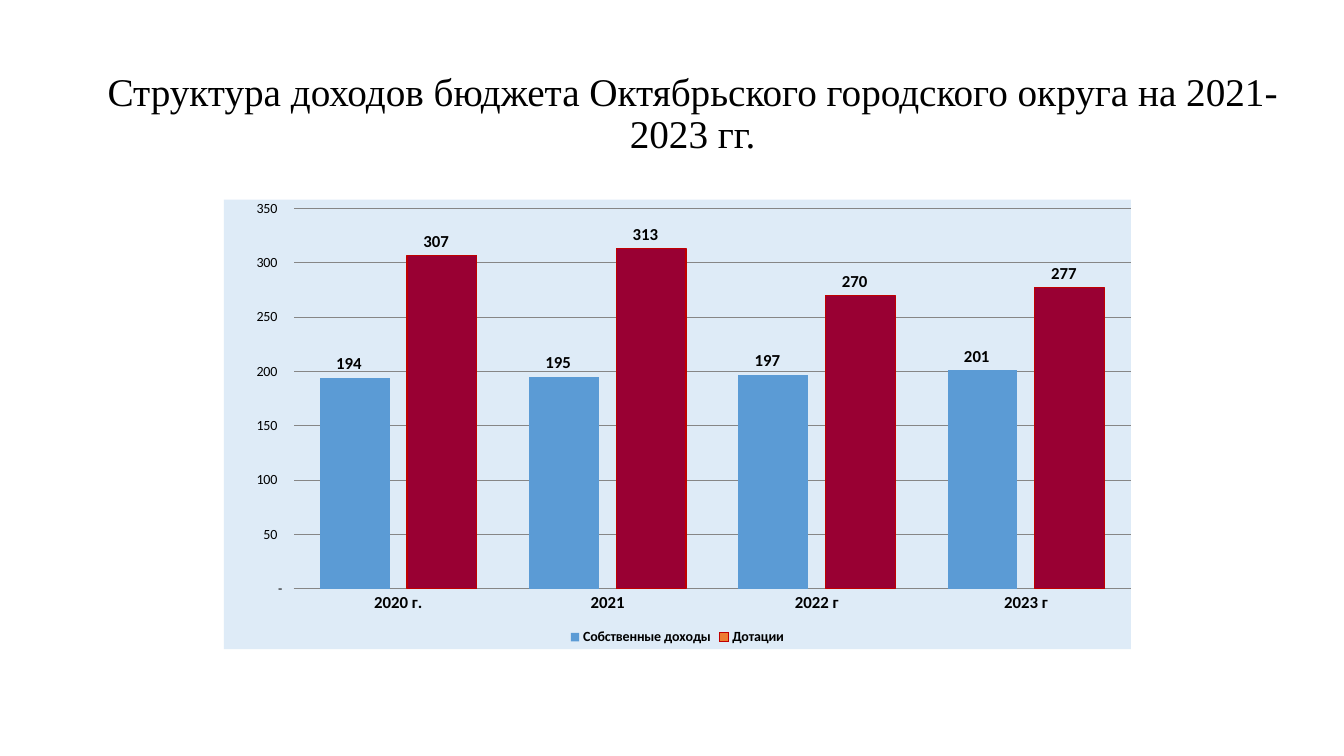
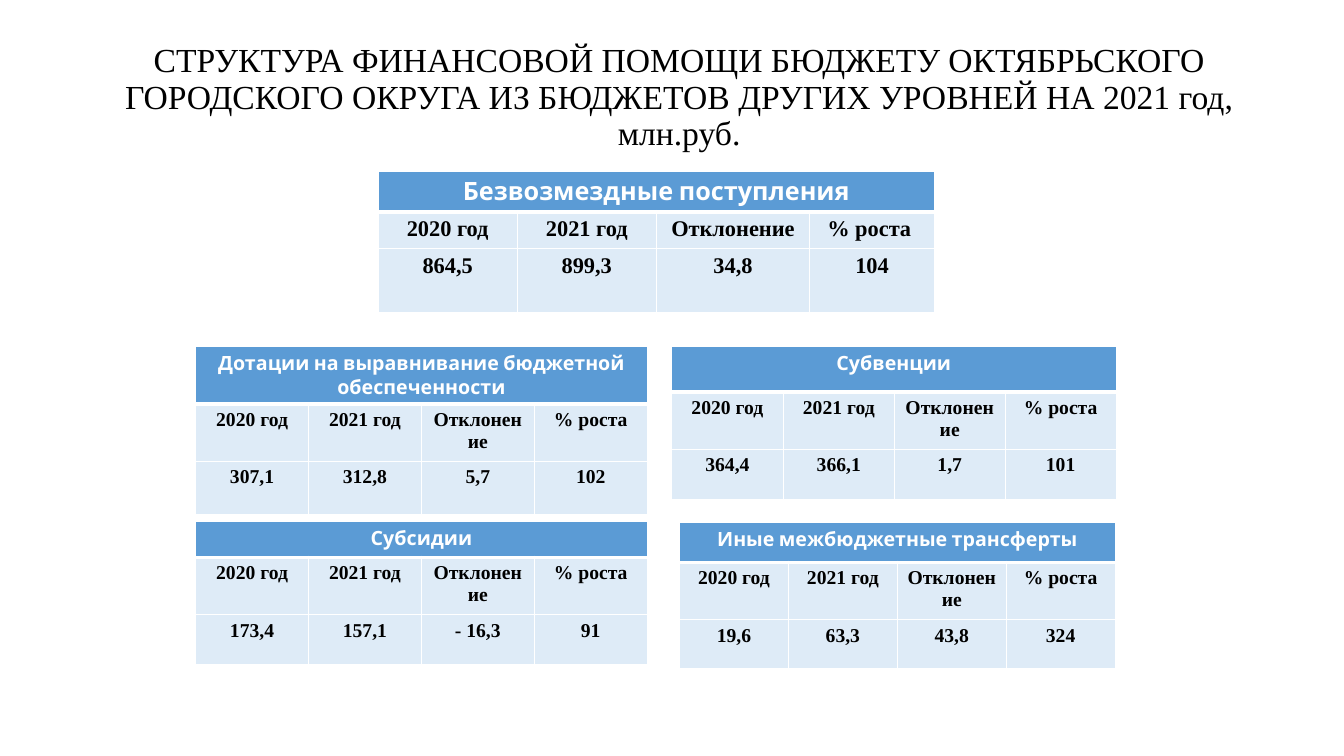
from lxml.etree import SubElement
from pptx import Presentation
from pptx.chart.data import CategoryChartData
from pptx.dml.color import RGBColor
from pptx.enum.chart import XL_CHART_TYPE, XL_LABEL_POSITION, XL_LEGEND_POSITION, XL_TICK_MARK
from pptx.enum.text import MSO_ANCHOR, PP_ALIGN
from pptx.oxml import parse_xml
from pptx.oxml.ns import nsdecls, qn
from pptx.util import Inches, Pt

COLORS = {
    "text": "000000", "white": "FFFFFF", "blue": "5B9BD5", "pale": "DEEBF7",
    "orange": "ED7D31", "crimson": "990033", "red": "C00000", "grid": "868686",
}
SERIF, HEADING, CHART_FONT = "Times New Roman", "Cabin", "Calibri"

# Content: titles as text, size, place
INCOME_TITLE = ("Структура доходов бюджета Октябрьского городского округа на 2021-2023 гг.",
                28, (0.92, 0.44, 11.9, 1.4))
AID_TITLE = ("СТРУКТУРА ФИНАНСОВОЙ ПОМОЩИ БЮДЖЕТУ ОКТЯБРЬСКОГО ГОРОДСКОГО ОКРУГА "
             "ИЗ БЮДЖЕТОВ ДРУГИХ УРОВНЕЙ НА 2021 год, млн.руб.",
             24, (0.84, 0.25, 11.79, 1.45))

# Content: income chart
YEARS = ["2020 г.", "2021", "2022 г", "2023 г"]
INCOME = {"Собственные доходы": [194, 195, 197, 201], "Дотации": [307, 313, 270, 277]}
CHART_PLACE = (2.22, 1.98, 9, 4.46)
PLOT_PLACE = {"x": 0.077, "y": 0.02, "w": 0.923, "h": 0.846}
NUMBER_FORMAT = r'_-* #,##0_р_._-;\-* #,##0_р_._-;_-* "-"?'

# Content: aid tables
AID_COLUMNS = ["2020 год", "2021 год", "Отклонение", "% роста"]
AID_TABLES = [
    {"name": "Безвозмездные поступления", "values": ["864,5", "899,3", "34,8", "104"],
     "corner": (3.75, 1.7), "columns": [1.38, 1.38, 1.52, 1.24], "rows": [0.4, 0.34, 0.63],
     "sizes": (18, 16), "last_column": "% роста "},
    {"name": "Дотации на выравнивание бюджетной обеспеченности",
     "values": ["307,1", "312,8", "5,7", "102"],
     "corner": (1.94, 3.44), "columns": [1.12] * 4, "rows": [0.53] * 3},
    {"name": "Субвенции", "values": ["364,4", "366,1", "1,7", "101"],
     "corner": (6.66, 3.44), "columns": [1.11, 1.1, 1.1, 1.1], "rows": [0.45, 0.55, 0.5]},
    {"name": "Субсидии", "values": ["173,4", "157,1", "- 16,3", "91"],
     "corner": (1.94, 5.17), "columns": [1.12] * 4, "rows": [0.36, 0.5, 0.5]},
    {"name": "Иные межбюджетные трансферты", "values": ["19,6", "63,3", "43,8", "324"],
     "corner": (6.74, 5.18), "columns": [1.08] * 4, "rows": [0.4, 0.56, 0.49]},
]


def color(name):
    return RGBColor.from_string(COLORS[name])


def style_font(font, size, name, tint="text", bold=False):
    font.size, font.name, font.bold = Pt(size), name, bold
    font.color.rgb = color(tint)


def write(paragraph, text, *font_style):
    paragraph.alignment = PP_ALIGN.CENTER
    run = paragraph.add_run()
    run.text = text
    style_font(run.font, *font_style)


def add_title_slide(presentation, title):
    text, size, place = title
    slide = presentation.slides.add_slide(presentation.slide_layouts[6])
    frame = slide.shapes.add_textbox(*map(Inches, place)).text_frame
    frame.word_wrap = True
    frame.vertical_anchor = MSO_ANCHOR.MIDDLE
    frame.paragraphs[0].line_spacing = 0.9
    write(frame.paragraphs[0], text, size, SERIF)
    return slide


# Chart parts
def chart_background():
    return parse_xml(f'<c:spPr {nsdecls("c", "a")}><a:solidFill><a:srgbClr val="{COLORS["pale"]}"/>'
                     '</a:solidFill><a:ln><a:noFill/></a:ln></c:spPr>')


def place_plot(chart):
    plot_area = chart._chartSpace.chart.plotArea
    for layout in plot_area.findall(qn("c:layout")):
        plot_area.remove(layout)
    settings = {"layoutTarget": "inner", "xMode": "edge", "yMode": "edge", **PLOT_PLACE}
    items = "".join(f'<c:{key} val="{value}"/>' for key, value in settings.items())
    plot_area.insert(0, parse_xml(f'<c:layout {nsdecls("c")}><c:manualLayout>{items}'
                                  '</c:manualLayout></c:layout>'))
    plot_area.append(chart_background())
    chart._chartSpace.chart.addnext(chart_background())


def outline(line):
    line.color.rgb = color("red")
    line.width = Pt(0.75)


def add_income_chart(slide):
    data = CategoryChartData(number_format=NUMBER_FORMAT)
    data.categories = YEARS
    for name, values in INCOME.items():
        data.add_series(name, values)
    chart = slide.shapes.add_chart(XL_CHART_TYPE.COLUMN_CLUSTERED,
                                   *map(Inches, CHART_PLACE), data).chart
    style_font(chart.font, 10, CHART_FONT)
    chart.has_title = False
    chart.has_legend = True
    chart.legend.position = XL_LEGEND_POSITION.BOTTOM
    chart.legend.include_in_layout = False
    style_font(chart.legend.font, 10, CHART_FONT, "text", True)

    # Axes
    categories, values = chart.category_axis, chart.value_axis
    for axis in (categories, values):
        axis.major_tick_mark = axis.minor_tick_mark = XL_TICK_MARK.NONE
    style_font(categories.tick_labels.font, 12, CHART_FONT, "text", True)
    values.minimum_scale, values.maximum_scale, values.major_unit = 0, 350, 50
    values.tick_labels.number_format = NUMBER_FORMAT
    values.tick_labels.number_format_is_linked = False
    values.format.line.fill.background()
    for line in (categories.format.line, values.major_gridlines.format.line):
        line.color.rgb = color("grid")
        line.width = Pt(0.75)

    # Columns and labels
    plot = chart.plots[0]
    plot.gap_width, plot.overlap, plot.vary_by_categories = 75, -25, False
    own_income, grants = plot.series
    for series, tint in ((own_income, "blue"), (grants, "orange")):
        series.format.fill.solid()
        series.format.fill.fore_color.rgb = color(tint)
        labels = series.data_labels
        labels.show_value = True
        labels.position = XL_LABEL_POSITION.OUTSIDE_END
        labels.number_format = NUMBER_FORMAT
        labels.number_format_is_linked = False
        style_font(labels.font, 12, CHART_FONT, "text", True)
    outline(grants.format.line)
    for index in range(len(YEARS)):
        point = grants.points[index].format
        point.fill.solid()
        point.fill.fore_color.rgb = color("crimson")
        outline(point.line)
    place_plot(chart)


# Table parts
def set_borders(cell, top, bottom):
    properties = cell._tc.get_or_add_tcPr()
    for index, (side, width) in enumerate({"L": 1, "R": 1, "T": top, "B": bottom}.items()):
        line = SubElement(properties, qn(f"a:ln{side}"), w=str(Pt(width)))
        fill = SubElement(line, qn("a:solidFill"))
        SubElement(fill, qn("a:srgbClr"), val=COLORS["white"])
        properties.insert(index, line)


def add_aid_table(slide, aid):
    columns, rows = aid["columns"], aid["rows"]
    heading_size, body_size = aid.get("sizes", (14, 14))
    place = (*aid["corner"], sum(columns), sum(rows))
    table = slide.shapes.add_table(len(rows), len(columns), *map(Inches, place)).table
    for column, width in zip(table.columns, columns):
        column.width = Inches(width)
    for row, height in zip(table.rows, rows):
        row.height = Inches(height)
    table.cell(0, 0).merge(table.cell(0, len(columns) - 1))

    labels = AID_COLUMNS[:-1] + [aid.get("last_column", AID_COLUMNS[-1])]
    for row_index, texts in enumerate([[aid["name"]], labels, aid["values"]]):
        is_heading = row_index == 0
        for column_index in range(len(columns)):
            cell = table.cell(row_index, column_index)
            cell.fill.solid()
            cell.fill.fore_color.rgb = color("blue" if is_heading else "pale")
            set_borders(cell, 3 if row_index == 1 else 1, 3 if is_heading else 1)
        style = (heading_size, HEADING, "white", True) if is_heading else (body_size, SERIF, "text", True)
        for column_index, text in enumerate(texts):
            write(table.cell(row_index, column_index).text_frame.paragraphs[0], text, *style)


def main():
    presentation = Presentation()
    presentation.slide_width, presentation.slide_height = Inches(13.33), Inches(7.5)
    add_income_chart(add_title_slide(presentation, INCOME_TITLE))
    aid_slide = add_title_slide(presentation, AID_TITLE)
    for aid in AID_TABLES:
        add_aid_table(aid_slide, aid)
    presentation.save("out.pptx")


if __name__ == "__main__":
    main()
